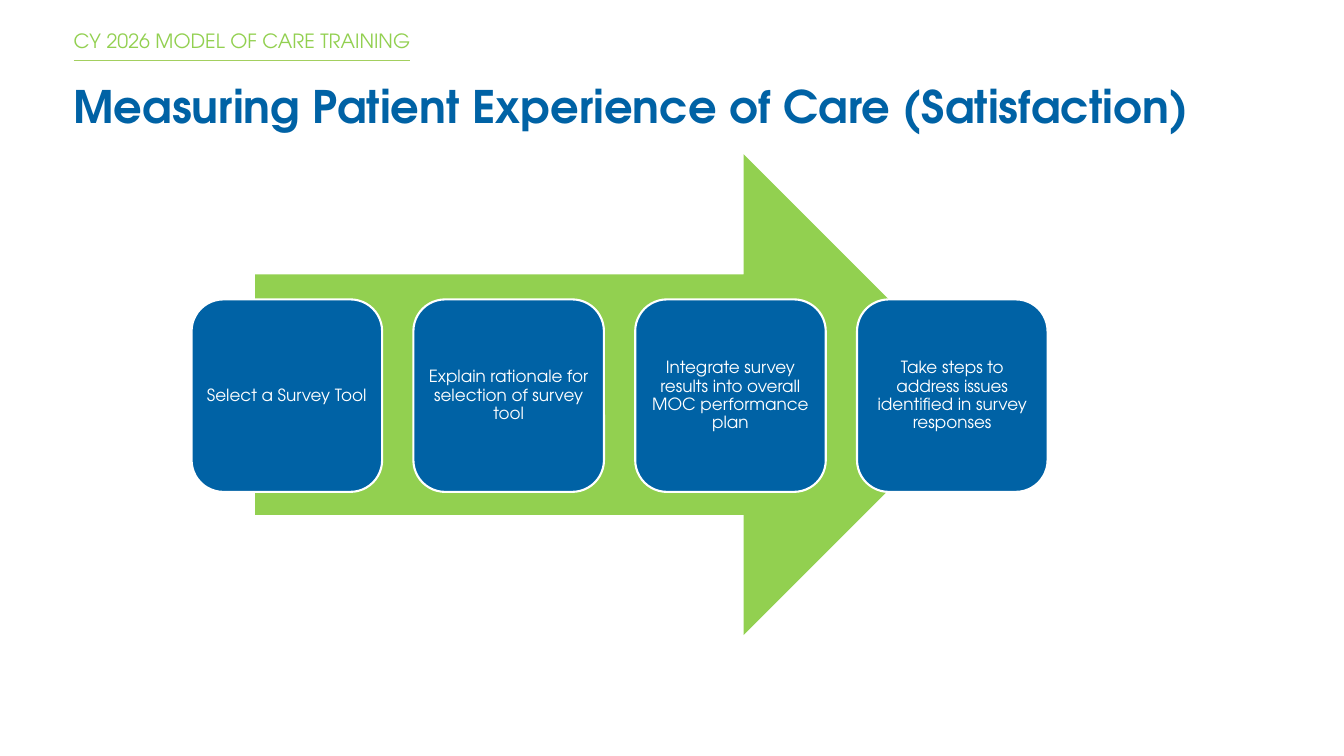
import pptx
import pptx.util
import pptx.dml.color
import pptx.enum.shapes
import pptx.enum.text
from dataclasses import dataclass
from pptx.util import Inches

SHAPE = pptx.enum.shapes.MSO_SHAPE
ALIGN = pptx.enum.text.PP_ALIGN
ANCHOR = pptx.enum.text.MSO_ANCHOR


@dataclass(frozen=True)
class Theme:
    font: str = "TeX Gyre Adventor"
    blue: str = "0062A5"
    green: str = "92D050"
    rule_green: str = "A3CF5F"
    white: str = "FFFFFF"
    eyebrow_size: int = 14
    title_size: int = 32
    step_size: int = 12


THEME = Theme()

STEPS = [
    "Select a Survey Tool",
    "Explain rationale for selection of survey tool",
    "Integrate survey results into overall MOC performance plan",
    "Take steps to address issues identified in survey responses",
]


def rgb(value):
    return pptx.dml.color.RGBColor.from_string(value)


def write(shape, text, size, color, align, anchor, margin=0, bold=False, spacing=1.0):
    """Fill a shape, text box or placeholder with one formatted paragraph."""
    frame = shape.text_frame
    frame.word_wrap = True
    frame.auto_size = pptx.enum.text.MSO_AUTO_SIZE.NONE
    frame.vertical_anchor = anchor
    frame.margin_left = frame.margin_right = Inches(margin)
    frame.margin_top = frame.margin_bottom = Inches(margin)
    paragraph = frame.paragraphs[0]
    paragraph.text = text
    paragraph.alignment = align
    paragraph.line_spacing = spacing
    paragraph.font.name = THEME.font
    paragraph.font.size = pptx.util.Pt(size)
    paragraph.font.bold = bold
    paragraph.font.color.rgb = rgb(color)


def add_eyebrow(slide, text):
    eyebrow = slide.shapes.add_textbox(
        Inches(0.73), Inches(0.18), Inches(3.5), Inches(0.48))
    write(eyebrow, text, THEME.eyebrow_size, THEME.green, ALIGN.LEFT,
          ANCHOR.MIDDLE, spacing=0.9)
    rule = slide.shapes.add_connector(
        pptx.enum.shapes.MSO_CONNECTOR.STRAIGHT,
        Inches(0.73), Inches(0.6), Inches(4.07), Inches(0.6))
    rule.line.color.rgb = rgb(THEME.rule_green)
    rule.line.width = pptx.util.Pt(1)
    rule._element.spPr.append(pptx.oxml.xmlchemy.OxmlElement("a:effectLst"))


def set_title(slide, text):
    title = slide.shapes.title
    title.left, title.top = Inches(0.73), Inches(0.78)
    title.width, title.height = Inches(12.47), Inches(0.7)
    write(title, text, THEME.title_size, THEME.blue, ALIGN.LEFT, ANCHOR.TOP, bold=True)


def add_block(slide, preset, left, top, width, height, fill):
    block = slide.shapes.add_shape(
        preset, Inches(left), Inches(top), Inches(width), Inches(height))
    block.shadow.inherit = False
    block.fill.solid()
    block.fill.fore_color.rgb = rgb(fill)
    block.line.fill.background()
    return block


def add_step(slide, left, text):
    step = add_block(slide, SHAPE.ROUNDED_RECTANGLE, left, 2.97, 1.89, 1.91, THEME.blue)
    step.line.color.rgb = rgb(THEME.white)
    step.line.width = pptx.util.Pt(1.5)
    write(step, text, THEME.step_size, THEME.white, ALIGN.CENTER, ANCHOR.MIDDLE,
          margin=0.05, spacing=0.9)


def main():
    deck = pptx.Presentation()
    deck.slide_width, deck.slide_height = Inches(13.33), Inches(7.5)
    slide = deck.slides.add_slide(deck.slide_layouts[5])

    # Heading
    add_eyebrow(slide, "CY 2026 MODEL OF CARE TRAINING")
    set_title(slide, "Measuring Patient Experience of Care (Satisfaction)")

    # Process arrow with its steps at an even pitch
    add_block(slide, SHAPE.RIGHT_ARROW, 2.53, 1.53, 7.23, 4.77, THEME.green)
    first_left, pitch = 1.9, 2.2
    for index, text in enumerate(STEPS):
        add_step(slide, first_left + index * pitch, text)

    deck.save("out.pptx")


if __name__ == "__main__":
    main()
